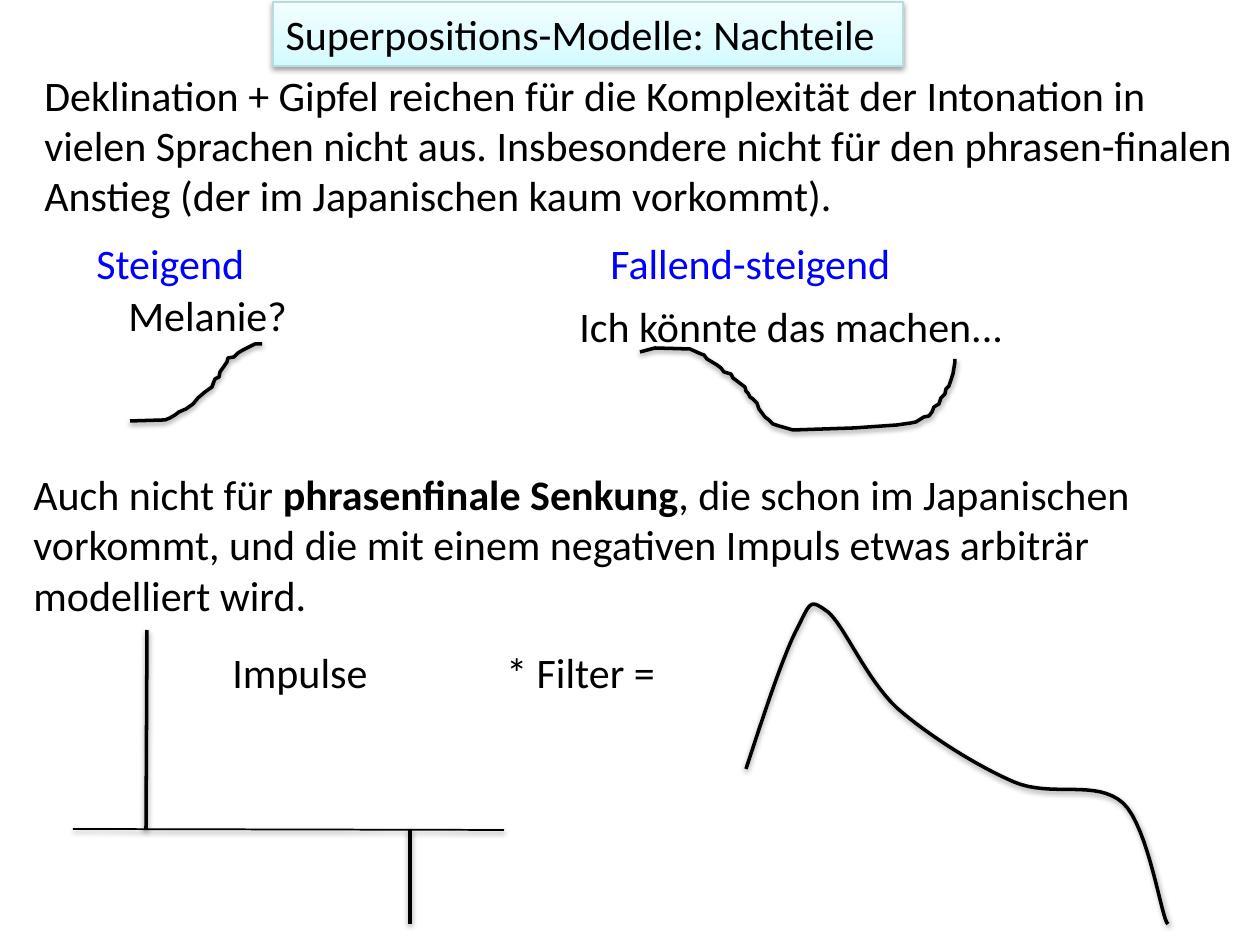
from copy import deepcopy
from dataclasses import dataclass

from lxml.etree import SubElement
from pptx import Presentation
from pptx.dml.color import RGBColor
from pptx.enum.shapes import MSO_CONNECTOR
from pptx.enum.text import MSO_ANCHOR, MSO_AUTO_SIZE, PP_ALIGN
from pptx.oxml.ns import qn
from pptx.util import Emu, Pt


@dataclass(frozen=True)
class Theme:
    font: str = "Calibri"
    size: int = 24
    text: str = "000000"
    accent: str = "0000FF"
    ink: str = "000000"
    title_border: str = "B6DCDF"
    title_stops: tuple = ((0, "D3FBFF"), (0.35, "DFFCFF"), (1, "F2FEFF"))
    thin: float = 1
    thick: float = 2


THEME = Theme()
EMU_PER_PX = 914400 / 126
CURVE_STEPS = 16

TITLE = ("Superpositions-Modelle: Nachteile", (273, 2, 630, 64))

# (left, top, width, height), wraps, colour, runs as (text, bold)
TEXTS = [
    ((32, 63, 1228, 165), True, THEME.text, [
        ("Deklination + Gipfel reichen für die Komplexität der Intonation in vielen "
         "Sprachen nicht aus. Insbesondere nicht für den phrasen-finalen Anstieg "
         "(der im Japanischen kaum vorkommt).", False)]),
    ((84, 231, 199, 64), True, THEME.accent, [("Steigend", False)]),
    ((116, 283, 252, 63), True, THEME.text, [("Melanie?", False)]),
    ((598, 231, 441, 64), True, THEME.accent, [("Fallend-steigend", False)]),
    ((567, 294, 483, 64), True, THEME.text, [("Ich könnte das machen...", False)]),
    ((21, 462, 1207, 168), True, THEME.text, [
        ("Auch nicht für ", False),
        ("phrasenfinale Senkung", True),
        (", die schon im Japanischen vorkommt, und die mit einem negativen Impuls "
         "etwas arbiträr modelliert wird.", False)]),
    ((220, 640, 163, 63), False, THEME.text, [("Impulse", False)]),
    ((494, 640, 189, 63), True, THEME.text, [("* Filter =", False)]),
]

RISING = [
    (130, 421), (165, 420), (170, 418), (175, 415), (179, 412), (186, 409), (193, 404),
    (198, 398), (205, 392), (212, 387), (213, 384), (215, 379), (219, 377), (220, 372),
    (227, 362), (228, 358), (234, 357), (238, 353), (243, 350), (249, 347), (255, 344),
    (262, 344),
]
FALLING_RISING = [
    (640, 352), (655, 348), (690, 349), (701, 354), (704, 355), (707, 359),
    (717, 365), (721, 368), (724, 372), (731, 374), (733, 378), (737, 381),
    (745, 387), (746, 391), (748, 393), (750, 397), (753, 399), (757, 403),
    (759, 409), (762, 413), (765, 417), (769, 420), (773, 424), (779, 426),
    (786, 428), (793, 430), (854, 428), (897, 425), (911, 423), (916, 422),
    (924, 417), (929, 416), (932, 412), (934, 407), (939, 404), (941, 398),
    (945, 394), (946, 389), (949, 386), (953, 374), (954, 368), (955, 362), (955, 359),
]
# Start point, then two control points and an end point per Bézier segment
FILTERED = [
    (746, 769),
    (765, 711), (784, 653), (798, 627),
    (811, 601), (810, 599), (828, 612),
    (844, 625), (866, 679), (897, 708),
    (929, 736), (977, 766), (1014, 782),
    (1052, 798), (1096, 779), (1123, 803),
    (1149, 827), (1162, 922), (1168, 924),
]

# (start, end, width): time axis, positive impulse, negative impulse
IMPULSE_LINES = [
    ((73, 829), (504, 830), THEME.thin),
    ((146, 830), (147, 630), THEME.thick),
    ((410, 924), (410, 829), THEME.thick),
]


def px(value):
    return Emu(round(value * EMU_PER_PX))


def colour(value):
    return RGBColor.from_string(value)


def sample_bezier(points):
    """Turn a chain of cubic Bézier segments into closely spaced points."""
    sampled = [points[0]]
    for first in range(0, len(points) - 1, 3):
        segment = points[first:first + 4]
        for step in range(1, CURVE_STEPS + 1):
            t = step / CURVE_STEPS
            weights = ((1 - t) ** 3, 3 * t * (1 - t) ** 2, 3 * t * t * (1 - t), t ** 3)
            sampled.append(tuple(
                sum(weight * point[axis] for weight, point in zip(weights, segment))
                for axis in (0, 1)))
    return sampled


def add_soft_shadow(shape):
    effects = SubElement(shape._element.spPr, qn("a:effectLst"))
    shadow = SubElement(effects, qn("a:outerShdw"), blurRad=str(Pt(3.1)),
                        dist=str(Pt(1.6)), dir="5400000", rotWithShape="0")
    black = SubElement(shadow, qn("a:srgbClr"), val="000000")
    SubElement(black, qn("a:alpha"), val="38000")


def style_line(shape, line_colour, width):
    shape.line.color.rgb = colour(line_colour)
    shape.line.width = Pt(width)
    add_soft_shadow(shape)


def fill_text(shape, runs, text_colour, wraps=True, auto_size=MSO_AUTO_SIZE.SHAPE_TO_FIT_TEXT):
    frame = shape.text_frame
    frame.word_wrap = wraps
    frame.auto_size = auto_size
    frame.vertical_anchor = MSO_ANCHOR.TOP
    paragraph = frame.paragraphs[0]
    paragraph.alignment = PP_ALIGN.LEFT
    for text, bold in runs:
        run = paragraph.add_run()
        run.text = text
        run.font.name = THEME.font
        run.font.size = Pt(THEME.size)
        run.font.bold = bold
        run.font.color.rgb = colour(text_colour)


def format_title(title):
    text, box = TITLE
    title.left, title.top, title.width, title.height = map(px, box)
    fill_text(title, [(text, False)], THEME.text, auto_size=MSO_AUTO_SIZE.NONE)
    title.fill.gradient()
    title.fill.gradient_angle = 90
    first_stop = title._element.spPr.find(".//" + qn("a:gs"))
    first_stop.addnext(deepcopy(first_stop))
    for stop, (position, stop_colour) in zip(title.fill.gradient_stops, THEME.title_stops):
        stop.position = position
        stop.color.rgb = colour(stop_colour)
    style_line(title, THEME.title_border, 0.75)


def add_curve(slide, points):
    """Draw an open outline, in EMU so that no point is rounded to a whole px."""
    start, *rest = [(px(x), px(y)) for x, y in points]
    builder = slide.shapes.build_freeform(*start)
    builder.add_line_segments(rest, close=False)
    curve = builder.convert_to_shape()
    curve.fill.background()
    style_line(curve, THEME.ink, THEME.thick)


def main():
    presentation = Presentation()
    presentation.slide_width, presentation.slide_height = px(1260), px(945)
    slide = presentation.slides.add_slide(presentation.slide_layouts[5])
    format_title(slide.shapes.title)
    for box, wraps, text_colour, runs in TEXTS:
        fill_text(slide.shapes.add_textbox(*map(px, box)), runs, text_colour, wraps)
    for points in (FALLING_RISING, sample_bezier(FILTERED), RISING):
        add_curve(slide, points)
    for start, end, width in IMPULSE_LINES:
        line = slide.shapes.add_connector(MSO_CONNECTOR.STRAIGHT, *map(px, start + end))
        style_line(line, THEME.ink, width)
    presentation.save("out.pptx")


if __name__ == "__main__":
    main()
